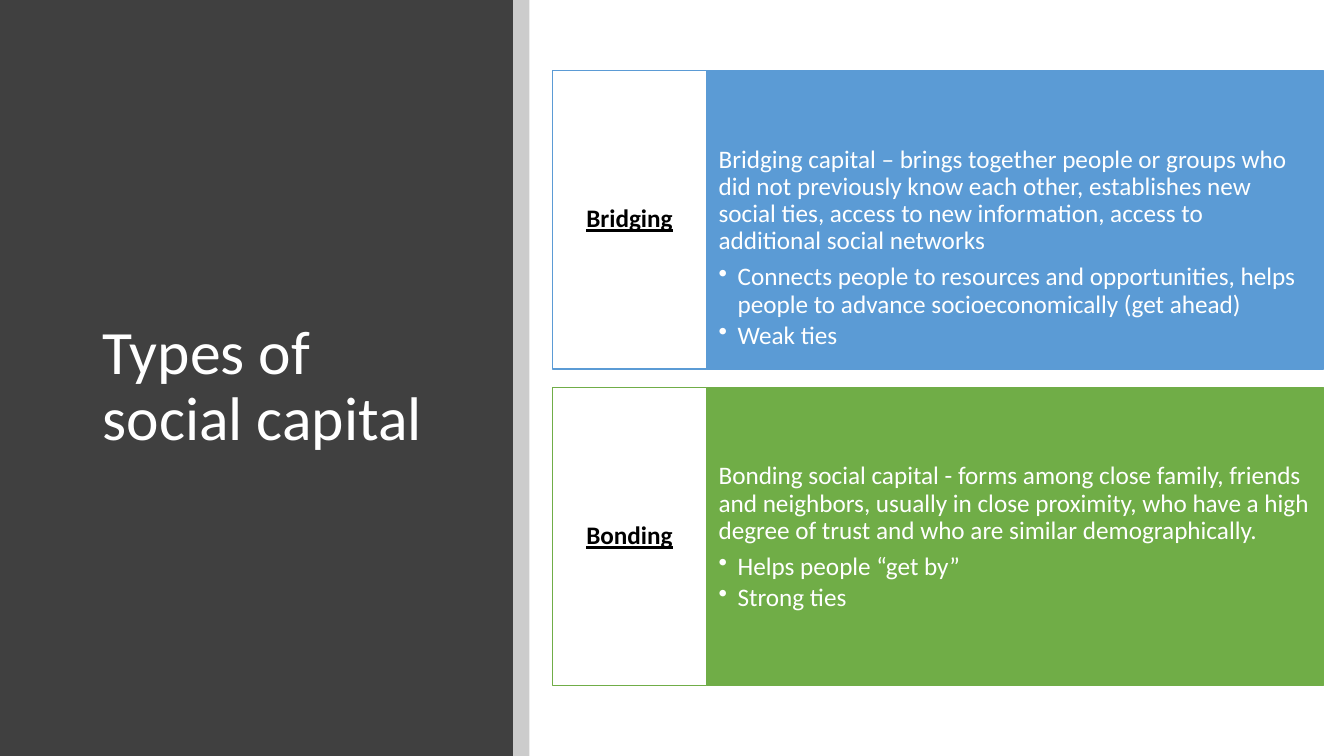
import pptx
import pptx.dml.color
import pptx.enum.shapes
import pptx.enum.text
import pptx.oxml
import pptx.oxml.ns
import pptx.util
from pptx.util import Cm

RGBColor = pptx.dml.color.RGBColor
WHITE = RGBColor(0xFF, 0xFF, 0xFF)
BLACK = RGBColor(0x00, 0x00, 0x00)
CHARCOAL = RGBColor(0x40, 0x40, 0x40)
BLUE = RGBColor(0x5B, 0x9B, 0xD5)
GREEN = RGBColor(0x70, 0xAD, 0x47)

ALIGN = pptx.enum.text.PP_ALIGN
ANCHOR = pptx.enum.text.MSO_ANCHOR

SLIDE_WIDTH, SLIDE_HEIGHT = 33.87, 19.05
PANEL_WIDTH, STRIP_WIDTH = 12.93, 0.41
LABEL_LEFT, LABEL_WIDTH, DETAIL_WIDTH = 13.92, 3.89, 15.54
ROW_TOP, ROW_HEIGHT, ROW_PITCH = 1.78, 7.52, 7.98

CAPITAL_TYPES = [
    ("Bridging", BLUE,
     "Bridging capital – brings together people or groups who did not previously "
     "know each other, establishes new social ties, access to new information, "
     "access to additional social networks",
     ["Connects people to resources and opportunities, helps people to advance "
      "socioeconomically (get ahead)", "Weak ties"]),
    ("Bonding", GREEN,
     "Bonding social capital - forms among close family, friends and neighbors, "
     "usually in close proximity, who have a high degree of trust and who are "
     "similar demographically.",
     ["Helps people “get by”", "Strong ties"]),
]


class SlideBuilder:
    """Holds the text style and the current slide."""

    font_name = "Calibri"
    body_size = 18
    title_size = 44
    line_spacing = 0.9

    def __init__(self, slide):
        self.slide = slide

    def box(self, left, top, width, height, fill, line=None, opacity=None):
        box = self.slide.shapes.add_shape(
            pptx.enum.shapes.MSO_SHAPE.RECTANGLE,
            Cm(left), Cm(top), Cm(width), Cm(height))
        box.shadow.inherit = False
        box.fill.solid()
        box.fill.fore_color.rgb = fill
        if line is None:
            box.line.fill.background()
        else:
            box.line.color.rgb = line
            box.line.width = pptx.util.Pt(1)
        if opacity is not None:
            color = box._element.spPr.find(".//" + pptx.oxml.ns.qn("a:srgbClr"))
            alpha = pptx.oxml.parse_xml(
                f'<a:alpha {pptx.oxml.ns.nsdecls("a")} val="{opacity * 1000}"/>')
            color.append(alpha)
        return box

    def frame(self, shape, anchor, side, edge):
        frame = shape.text_frame
        frame.word_wrap = True
        frame.vertical_anchor = anchor
        frame.margin_left = frame.margin_right = Cm(side)
        frame.margin_top = frame.margin_bottom = Cm(edge)
        return frame

    def set_text(self, paragraph, text, color, size=body_size, align=ALIGN.LEFT,
                 after=0.35):
        paragraph.text = text
        paragraph.alignment = align
        paragraph.line_spacing = self.line_spacing
        paragraph.space_after = pptx.util.Pt(round(size * after, 1))
        paragraph.font.name = self.font_name
        paragraph.font.size = pptx.util.Pt(size)
        paragraph.font.color.rgb = color

    def bullet(self, frame, text, color):
        paragraph = frame.add_paragraph()
        self.set_text(paragraph, text, color, after=0.15)
        paragraph.level = 1
        properties = paragraph._p.get_or_add_pPr()
        properties.set("marL", str(Cm(0.48)))
        properties.set("indent", str(Cm(-0.48)))
        properties.append(pptx.oxml.parse_xml(
            f'<a:buChar {pptx.oxml.ns.nsdecls("a")} char="•"/>'))
        # The bullet must precede the default run properties
        properties.append(properties.find(pptx.oxml.ns.qn("a:defRPr")))

    def title(self, text, left, top, width, height):
        title = self.slide.shapes.title
        title.left, title.top = Cm(left), Cm(top)
        title.width, title.height = Cm(width), Cm(height)
        frame = self.frame(title, ANCHOR.MIDDLE, 0.25, 0.13)
        self.set_text(frame.paragraphs[0], text, WHITE, self.title_size, after=0)
        # Bring the title in front of its panel
        title._element.getparent().append(title._element)

    def label(self, text, top, color):
        label = self.box(LABEL_LEFT, top, LABEL_WIDTH, ROW_HEIGHT, WHITE, color)
        paragraph = self.frame(label, ANCHOR.MIDDLE, 0.2, 0.74).paragraphs[0]
        self.set_text(paragraph, text, BLACK, align=ALIGN.CENTER)
        paragraph.font.bold = True
        paragraph.font.underline = True

    def detail(self, summary, points, top, color):
        detail = self.box(LABEL_LEFT + LABEL_WIDTH, top, DETAIL_WIDTH, ROW_HEIGHT,
                          color, color)
        frame = self.frame(detail, ANCHOR.TOP, 0.3, 1.91)
        self.set_text(frame.paragraphs[0], summary, WHITE)
        for point in points:
            self.bullet(frame, point, WHITE)


def main():
    deck = pptx.Presentation()
    deck.slide_width, deck.slide_height = Cm(SLIDE_WIDTH), Cm(SLIDE_HEIGHT)
    builder = SlideBuilder(deck.slides.add_slide(deck.slide_layouts[5]))

    # Title panel and the strip beside it
    builder.box(0, 0, PANEL_WIDTH, SLIDE_HEIGHT, CHARCOAL)
    builder.title("Types of social capital", 2.34, 2.26, 9.27, 15.01)
    builder.box(PANEL_WIDTH, 0, STRIP_WIDTH, SLIDE_HEIGHT, BLACK, opacity=20)

    # One row per type of capital
    for row, (name, color, summary, points) in enumerate(CAPITAL_TYPES):
        top = ROW_TOP + row * ROW_PITCH
        builder.detail(summary, points, top, color)
        builder.label(name, top, color)

    deck.save("out.pptx")


if __name__ == "__main__":
    main()
